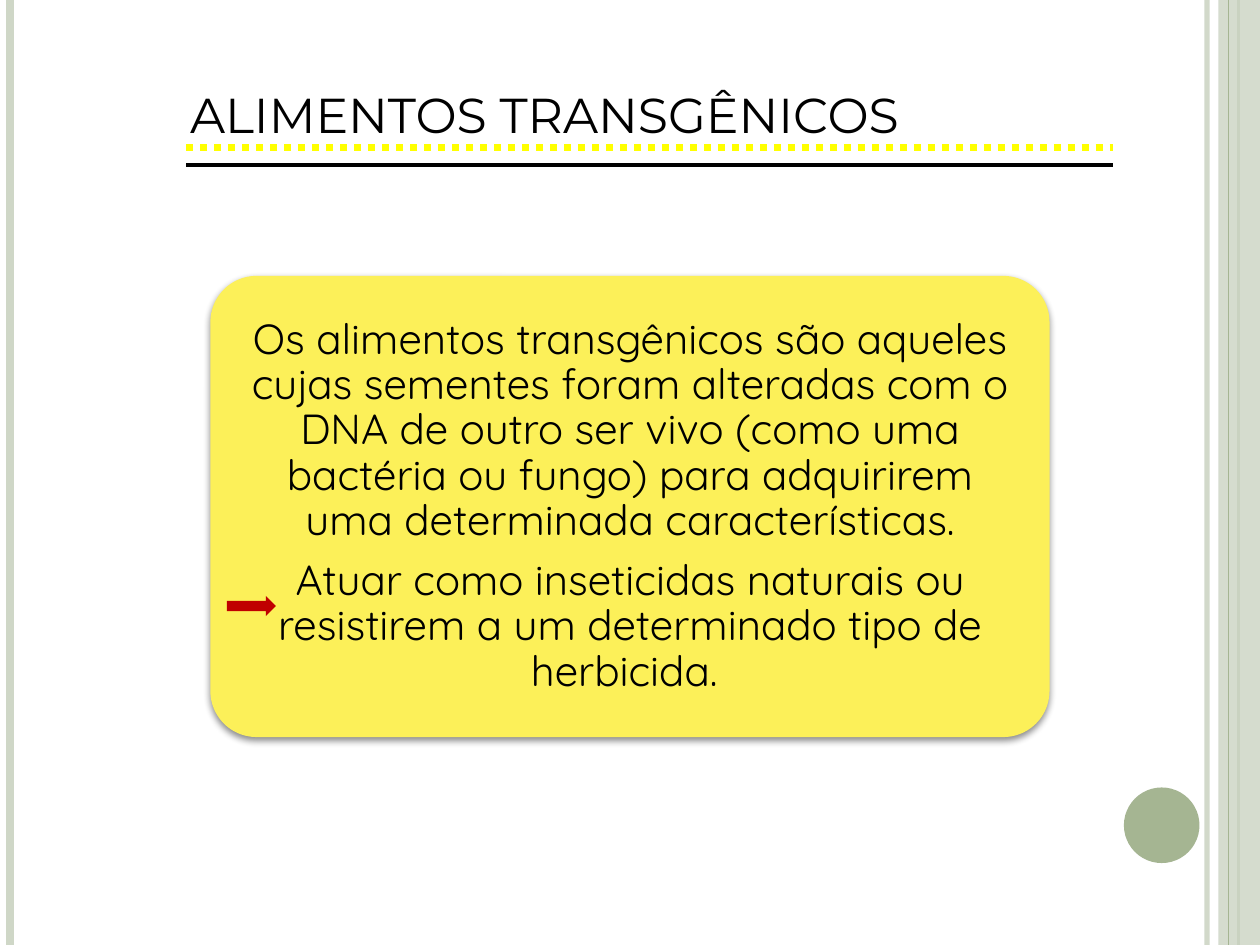
"""Build the slide that defines transgenic foods."""
from lxml.etree import SubElement
from pptx import Presentation
from pptx.dml.color import RGBColor
from pptx.enum.dml import MSO_LINE_DASH_STYLE as Dash
from pptx.enum.shapes import MSO_CONNECTOR, MSO_SHAPE as Shape
from pptx.enum.text import MSO_ANCHOR, PP_ALIGN
from pptx.oxml.ns import qn
from pptx.util import Inches, Pt

TITLE = "ALIMENTOS TRANSGÊNICOS"
BODY = [
    "Os alimentos transgênicos são aqueles cujas sementes foram alteradas com o DNA "
    "de outro ser vivo (como uma bactéria ou fungo) para adquirirem uma determinada "
    "características.",
    "Atuar como inseticidas naturais ou resistirem a um determinado tipo de herbicida. ",
]
WIDTH, HEIGHT = 10, 7.5
PALE, GREEN, YELLOW, BLACK = "CFD7C7", "A5B592", "FFFF00", "000000"
LEFT_STRIPES = [(9.58, PALE, 3, 93), (0.08, PALE, 4.5, 100), (9.83, GREEN, 1.5, 100)]
INNER_STRIPE = (9.75, GREEN, 0.75, 100)
RULE_LEFT, RULE_RIGHT = 1.48, 8.83
RULES = [(1.17, YELLOW, 4, Dash.ROUND_DOT), (1.31, BLACK, 2.5, Dash.SOLID)]
CARD = (1.67, 2.19, 6.66, 3.66)


def paint(color_format, color, opacity=100):
    color_format.rgb = RGBColor.from_string(color)
    if opacity < 100:
        node = color_format._xFill.find(qn("a:srgbClr"))
        SubElement(node, qn("a:alpha"), val=str(opacity * 1000))


def add_line(page, start, end, color, width, opacity=100, dash=Dash.SOLID):
    points = [Inches(value) for value in (*start, *end)]
    line = page.shapes.add_connector(MSO_CONNECTOR.STRAIGHT, *points)
    line.line.width = Pt(width)
    line.line.fill.solid()
    paint(line.line.color, color)
    if opacity < 100:
        node = line.line._ln.find(qn("a:solidFill")).find(qn("a:srgbClr"))
        SubElement(node, qn("a:alpha"), val=str(opacity * 1000))
    line.line.dash_style = dash
    SubElement(line._element.spPr, qn("a:effectLst"))


def add_stripe(page, x, color, width, opacity):
    add_line(page, (x, 0), (x, HEIGHT), color, width, opacity)


def add_filled(page, kind, place, color, opacity=100):
    shape = page.shapes.add_shape(kind, *map(Inches, place))
    shape.shadow.inherit = False
    shape.fill.solid()
    shape.fill.fore_color.rgb = RGBColor.from_string(color)
    if opacity < 100:
        node = shape._element.spPr.find(qn("a:solidFill")).find(qn("a:srgbClr"))
        SubElement(node, qn("a:alpha"), val=str(opacity * 1000))
    shape.line.fill.background()
    return shape


def add_shadow(shape):
    effects = shape._element.spPr.find(qn("a:effectLst"))
    shadow = SubElement(effects, qn("a:outerShdw"), blurRad=str(Pt(4)), dist=str(Pt(2)),
                        dir=str(90 * 60000), algn="ctr", rotWithShape="0")
    color = SubElement(shadow, qn("a:srgbClr"), val=BLACK)
    SubElement(color, qn("a:alpha"), val="45000")


def style(para, font, size):
    for span in para.runs:
        span.font.name = font
        span.font.size = Pt(size)
        span.font.color.rgb = RGBColor.from_string(BLACK)


def add_title(page):
    box = page.shapes.add_textbox(*map(Inches, (1.41, 0.62, 7.19, 0.57)))
    frame = box.text_frame
    frame.word_wrap = True
    frame.text = TITLE
    style(frame.paragraphs[0], "Montserrat", 28)


def add_card(page):
    card = add_filled(page, Shape.ROUNDED_RECTANGLE, CARD, "FCF059")
    card.adjustments[0] = 0.1
    add_shadow(card)
    frame = card.text_frame
    frame.word_wrap = True
    frame.vertical_anchor = MSO_ANCHOR.MIDDLE
    frame.margin_left = frame.margin_right = Inches(0.2)
    frame.margin_top = frame.margin_bottom = Inches(0.2)
    frame.text = "\n".join(BODY)
    for para in frame.paragraphs:
        para.alignment = PP_ALIGN.CENTER
        para.line_spacing = 0.9
        para.space_after = Pt(8.4)
        style(para, "Quicksand", 24)


def main():
    deck = Presentation()
    deck.slide_width, deck.slide_height = Inches(WIDTH), Inches(HEIGHT)
    page = deck.slides.add_slide(deck.slide_layouts[6])
    for stripe in LEFT_STRIPES:
        add_stripe(page, *stripe)
    add_filled(page, Shape.RECTANGLE, (9.67, 0, 0.33, HEIGHT), PALE, 87)
    add_stripe(page, *INNER_STRIPE)
    add_filled(page, Shape.OVAL, (8.92, 6.25, 0.6, 0.6), GREEN)
    for y, color, width, dash in RULES:
        add_line(page, (RULE_LEFT, y), (RULE_RIGHT, y), color, width, dash=dash)
    add_title(page)
    add_card(page)
    add_filled(page, Shape.RIGHT_ARROW, (1.8, 4.73, 0.39, 0.16), "C00000")
    deck.save("out.pptx")


if __name__ == "__main__":
    main()
